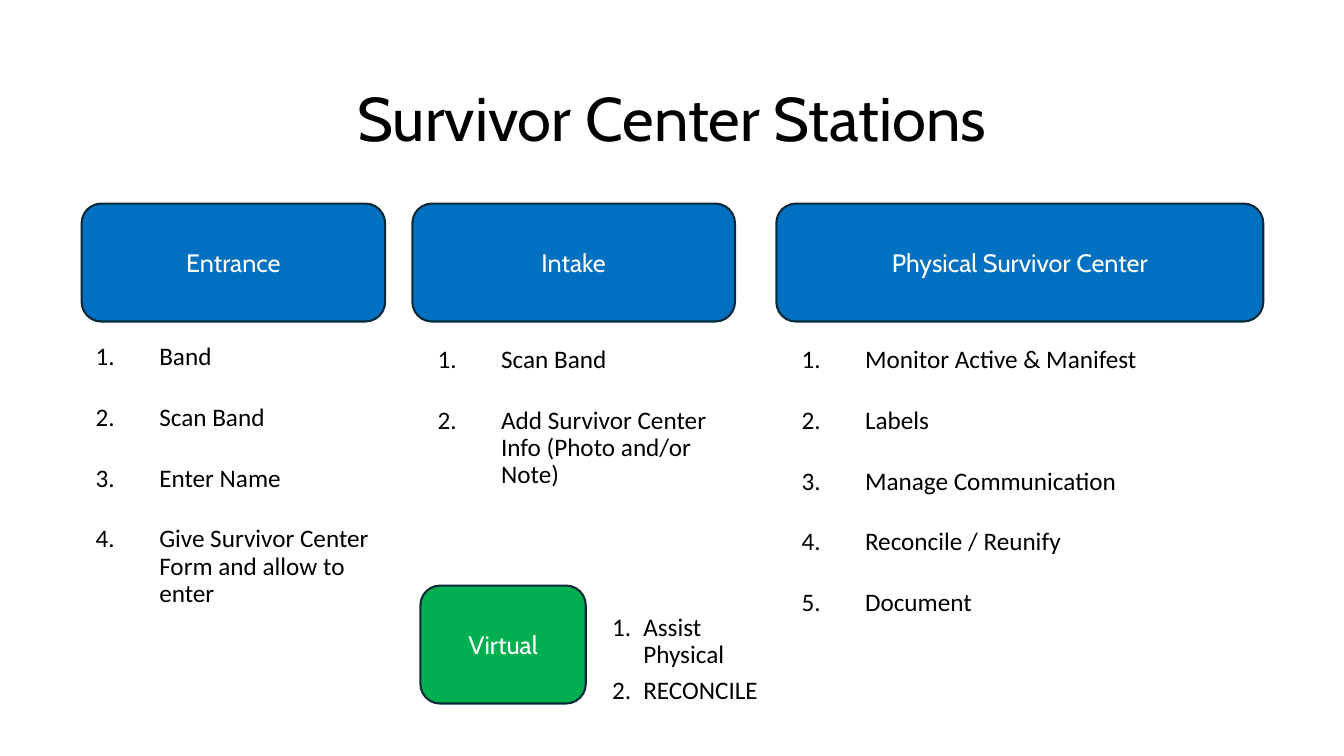
from lxml.etree import SubElement
from pptx import Presentation
from pptx.dml.color import RGBColor
from pptx.enum.shapes import MSO_SHAPE as Shape
from pptx.enum.text import MSO_ANCHOR as Anchor, MSO_AUTO_SIZE as AutoSize, PP_ALIGN as Align
from pptx.oxml.ns import qn
from pptx.util import Emu, Pt

EMU_PER_PX = 9144  # 100 px to the inch


def px(length):
    return Emu(length * EMU_PER_PX)


def color(hex_string):
    return RGBColor.from_string(hex_string)


def write(paragraph, text, *, size=18, font="Calibri", ink="000000",
          align=Align.LEFT, line_spacing=None, after=None):
    paragraph.text = text
    paragraph.alignment = align
    paragraph.line_spacing = line_spacing
    paragraph.space_after = after
    paragraph.font.size = Pt(size)
    paragraph.font.name = font
    paragraph.font.color.rgb = color(ink)


def number(paragraph, indent):
    """Turn on automatic 1. 2. 3. numbering with a hanging indent."""
    properties = paragraph._p.get_or_add_pPr()
    properties.set("marL", str(px(indent)))
    properties.set("indent", str(-px(indent)))
    SubElement(properties, qn("a:buFont"), typeface="+mj-lt")
    SubElement(properties, qn("a:buAutoNum"), type="arabicPeriod")


class StationSlide:
    heading_font = "Cabin"
    border = "092A39"
    line_spacing = 0.9
    station_height = 117

    def __init__(self, presentation):
        self.slide = presentation.slides.add_slide(presentation.slide_layouts[5])

    def title(self, text, left, top, width, height):
        title = self.slide.shapes.title
        title.left, title.top, title.width, title.height = map(px, (left, top, width, height))
        title.text_frame.vertical_anchor = Anchor.MIDDLE
        write(title.text_frame.paragraphs[0], text, size=44, font=self.heading_font,
              align=Align.CENTER, line_spacing=self.line_spacing)

    def station(self, text, left, top, width, fill):
        box = self.slide.shapes.add_shape(
            Shape.ROUNDED_RECTANGLE, *map(px, (left, top, width, self.station_height)))
        box.shadow.inherit = False
        box.fill.solid()
        box.fill.fore_color.rgb = color(fill)
        box.line.color.rgb = color(self.border)
        box.line.width = Pt(1.5)
        box.text_frame.vertical_anchor = Anchor.MIDDLE
        write(box.text_frame.paragraphs[0], text, font=self.heading_font,
              ink="FFFFFF", align=Align.CENTER)

    def steps(self, texts, left, top, width, height, indent=63, after=24):
        frame = self.slide.shapes.add_textbox(*map(px, (left, top, width, height))).text_frame
        frame.word_wrap = True
        frame.auto_size = AutoSize.SHAPE_TO_FIT_TEXT
        frame.margin_left = frame.margin_right = px(25)
        frame.margin_top = frame.margin_bottom = px(5)
        for index, text in enumerate(texts):
            paragraph = frame.add_paragraph() if index else frame.paragraphs[0]
            number(paragraph, indent)
            write(paragraph, text, line_spacing=self.line_spacing, after=Pt(after))


def main():
    presentation = Presentation()
    presentation.slide_width, presentation.slide_height = px(1333), px(750)
    page = StationSlide(presentation)
    page.title("Survivor Center Stations", 0, 73, 1333, 95)

    # name, left, width, then the place and texts of its steps
    stations = [
        ("Entrance", 81, 301, (70, 336, 330, 275),
         ["Band", "Scan Band", "Enter Name", "Give Survivor Center Form and allow to enter"]),
        ("Intake", 409, 320, (409, 339, 340, 214),
         ["Scan Band", "Add Survivor Center Info (Photo and/or Note)"]),
        ("Physical Survivor Center", 770, 483, (770, 339, 483, 281),
         ["Monitor Active & Manifest", "Labels", "Manage Communication",
          "Reconcile / Reunify", "Document"]),
    ]
    for name, left, width, steps_place, steps in stations:
        page.station(name, left, 202, width, "0070C0")
        page.steps(steps, *steps_place)

    page.station("Virtual", 417, 581, 164, "00B050")
    page.steps(["Assist Physical", "RECONCILE"], 582, 605, 215, 73, indent=31, after=6)
    presentation.save("out.pptx")


if __name__ == "__main__":
    main()
